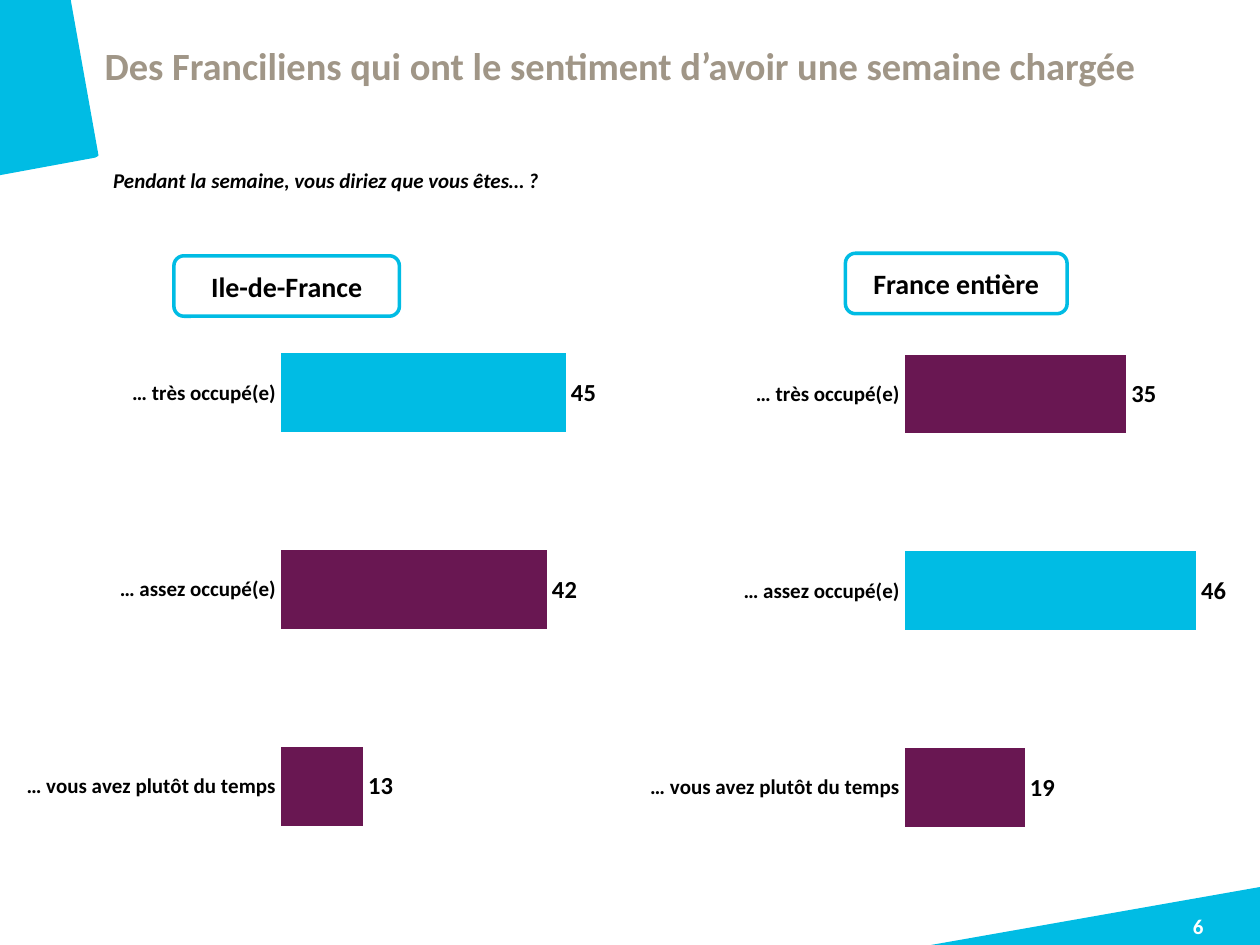
from dataclasses import dataclass

from lxml import etree
from pptx import Presentation
from pptx import util as u
from pptx.chart import data
from pptx.dml.color import RGBColor
from pptx.enum import chart as ch, shapes, text

CELL = 0.25  # inches; the slide is a grid of 40 columns by 30 rows
COLUMNS, ROWS = 40, 30


@dataclass(frozen=True)
class Theme:
    font: str = "Calibri"
    cyan: RGBColor = RGBColor(0x00, 0xBC, 0xE4)
    plum: RGBColor = RGBColor(0x69, 0x17, 0x52)
    taupe: RGBColor = RGBColor(0xA0, 0x96, 0x87)
    black: RGBColor = RGBColor(0, 0, 0)
    white: RGBColor = RGBColor(255, 255, 255)
    title: int = 22
    heading: int = 16
    value: int = 14
    body: int = 12


@dataclass(frozen=True)
class Box:
    """A region in grid columns and rows."""
    left: float
    top: float
    width: float
    height: float

    def emu(self):
        return [cells(n) for n in (self.left, self.top, self.width, self.height)]


THEME = Theme()
ANSWERS = ["… très occupé(e)", "… assez occupé(e)", "… vous avez plutôt du temps"]


def cells(count):
    return u.Inches(count * CELL)


def style(font, size, color, italic=False):
    font.name, font.size, font.bold = THEME.font, u.Pt(size), True
    font.italic = italic
    font.color.rgb = color


def add_text(slide, box, words, size, color, align=text.PP_ALIGN.LEFT,
             italic=False, inset=True):
    frame = slide.shapes.add_textbox(*box.emu()).text_frame
    frame.word_wrap = True
    if not inset:
        frame.margin_left = frame.margin_right = 0
        frame.margin_top = frame.margin_bottom = 0
    line = frame.paragraphs[0]
    line.text = words
    line.alignment = align
    style(line.runs[0].font, size, color, italic)


def add_corner(slide, box, outline):
    """Fill an outline whose points are shares of the box."""
    points = [(cells(box.left + x * box.width), cells(box.top + y * box.height))
              for x, y in outline]
    builder = slide.shapes.build_freeform(*points[0], scale=1.0)
    builder.add_line_segments(points[1:], close=True)
    corner = builder.convert_to_shape()
    corner.shadow.inherit = False
    corner.fill.solid()
    corner.fill.fore_color.rgb = THEME.cyan
    corner.line.fill.background()


def add_region_label(slide, box, words):
    label = slide.shapes.add_shape(shapes.MSO_SHAPE.ROUNDED_RECTANGLE, *box.emu())
    label.shadow.inherit = False
    label.fill.background()
    label.line.color.rgb = THEME.cyan
    label.line.width = u.Pt(2)
    frame = label.text_frame
    frame.vertical_anchor = text.MSO_ANCHOR.MIDDLE
    line = frame.paragraphs[0]
    line.text = words
    line.alignment = text.PP_ALIGN.CENTER
    style(line.runs[0].font, THEME.heading, THEME.black)


def fix_plot_area(chart, **shares):
    """Set the inner plot area, so that both charts share one scale."""
    plot_area = chart._chartSpace.chart.plotArea
    ns = etree.QName(plot_area).namespace
    for old in plot_area.findall(f"{{{ns}}}layout"):
        plot_area.remove(old)
    layout = etree.Element(f"{{{ns}}}layout")
    manual = etree.SubElement(layout, f"{{{ns}}}manualLayout")
    settings = {"layoutTarget": "inner", "xMode": "edge", "yMode": "edge", **shares}
    for tag, setting in settings.items():
        etree.SubElement(manual, f"{{{ns}}}{tag}").set("val", str(setting))
    plot_area.insert(0, layout)


def add_answers_chart(slide, box, percentages):
    answers = data.CategoryChartData()
    answers.categories = ANSWERS
    answers.add_series("Series 1", percentages)
    chart = slide.shapes.add_chart(
        ch.XL_CHART_TYPE.BAR_CLUSTERED, *box.emu(), answers).chart
    chart.has_legend = chart.has_title = False
    style(chart.font, THEME.body, THEME.black)
    fix_plot_area(chart, x=0.455, y=0.02, w=0.525, h=0.96)

    # Axes
    answer_axis, percent_axis = chart.category_axis, chart.value_axis
    answer_axis.reverse_order = True
    answer_axis.major_tick_mark = ch.XL_TICK_MARK.NONE
    answer_axis.format.line.fill.background()
    style(answer_axis.tick_labels.font, THEME.body, THEME.black)
    percent_axis.minimum_scale, percent_axis.maximum_scale = 0, 50
    percent_axis.has_major_gridlines = False
    percent_axis.visible = False

    # Bars, with the leading answer highlighted
    plot = chart.plots[0]
    plot.gap_width = 150
    plot.vary_by_categories = False
    bars = plot.series[0]
    leader = bars.points[percentages.index(max(percentages))]
    for part, color in ((bars, THEME.plum), (leader, THEME.cyan)):
        part.format.fill.solid()
        part.format.fill.fore_color.rgb = color

    # Values
    labels = bars.data_labels
    labels.show_value = True
    labels.position = ch.XL_LABEL_POSITION.OUTSIDE_END
    style(labels.font, THEME.value, THEME.black)


def add_region(slide, box, label_box, name, percentages):
    add_answers_chart(slide, box, percentages)
    add_region_label(slide, label_box, name)


def add_decor(slide):
    add_corner(slide, Box(29.56, 28.16, 10.44, 1.84), [(0, 1), (1, 0), (1, 1)])
    add_corner(slide, Box(0, 0, 3.12, 5.56),
               [(0, 1), (0, 0), (0.72, 0), (1, 0.88), (1, 0.89), (0.97, 0.9)])
    add_text(slide, Box(36.08, 29, 3.92, 1), "6", THEME.body, THEME.white,
             text.PP_ALIGN.CENTER, inset=False)


def add_header(slide):
    add_text(slide, Box(3.32, 1.32, 35.92, 1.96),
             "Des Franciliens qui ont le sentiment d’avoir une semaine chargée",
             THEME.title, THEME.taupe, inset=False)
    add_text(slide, Box(3.2, 5.12, 35.72, 1.2),
             "Pendant la semaine, vous diriez que vous êtes…\u00a0?".replace("\u00a0", " "),
             THEME.body, THEME.black, text.PP_ALIGN.JUSTIFY, italic=True)


def main():
    deck = Presentation()
    deck.slide_width, deck.slide_height = cells(COLUMNS), cells(ROWS)
    slide = deck.slides.add_slide(deck.slide_layouts[6])
    add_decor(slide)
    add_header(slide)
    add_region(slide, Box(20, 9, 19.16, 19.52), Box(26.84, 8.04, 7.04, 1.92),
               "France entière", [35, 46, 19])
    add_region(slide, Box(0.2, 8.96, 19.16, 19.52), Box(5.52, 8.12, 7.16, 1.92),
               "Ile-de-France", [45, 42, 13])
    deck.save("out.pptx")


if __name__ == "__main__":
    main()
